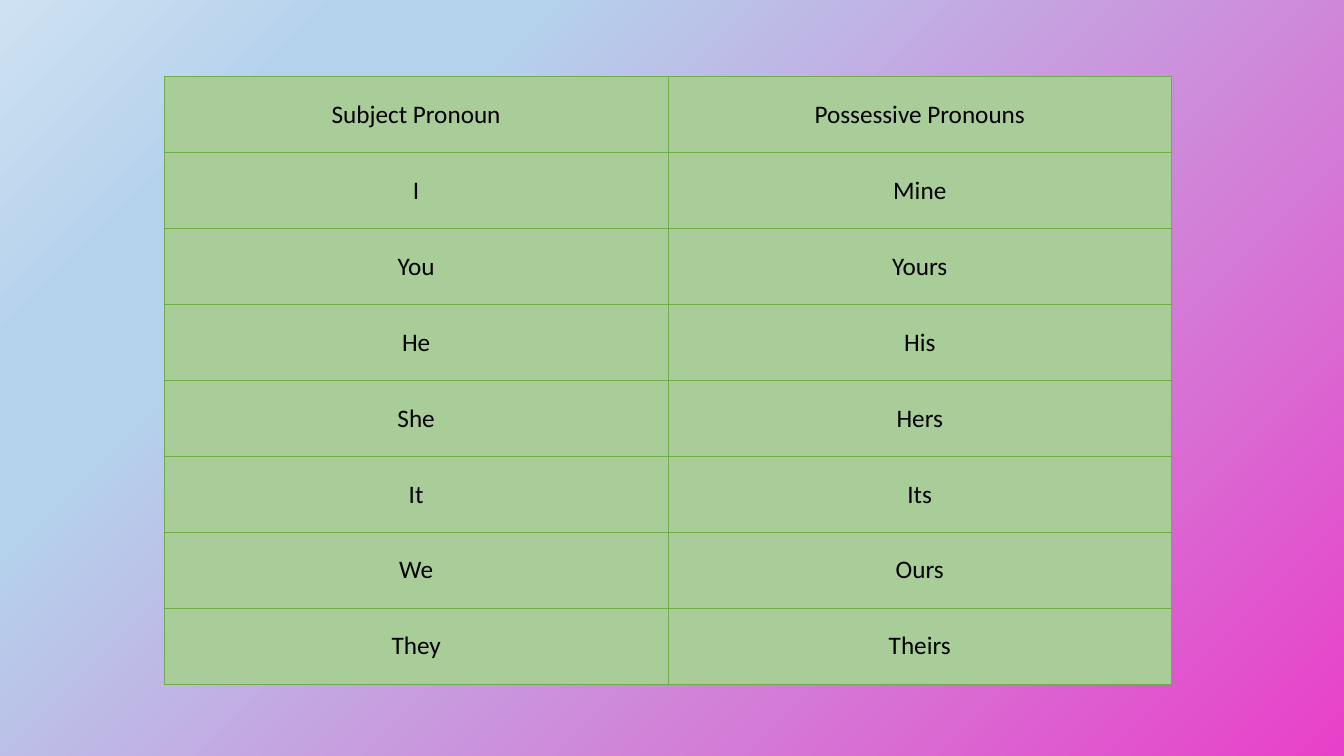
from lxml import etree
from pptx import Presentation, util as u
from pptx.dml.color import RGBColor
from pptx.enum import text
from pptx.oxml import parse_xml
from pptx.oxml.ns import nsdecls, qn

COLOURS = {"cell": "A9CD99", "border": "70AD47", "ink": "000000",
           "pink": "E840C8", "blue": "B5D2EC", "pale": "CEE1F2"}
STOPS = [(0, "pink"), (74, "blue"), (83, "blue"), (100, "pale")]
PRONOUNS = [
    ("Subject Pronoun", "Possessive Pronouns"),
    ("I", "Mine"),
    ("You", "Yours"),
    ("He", "His"),
    ("She", "Hers"),
    ("It", "Its"),
    ("We", "Ours"),
    ("They", "Theirs"),
]
WIDTH, HEIGHT = u.Inches(13.33), u.Inches(7.5)
LEFT, TOP = u.Inches(1.63), u.Inches(0.76)
COLUMN, ROW = u.Inches(4.995), u.Inches(6.03 / len(PRONOUNS))


def paint_background(page):
    """Radial gradient spreading from the bottom right corner."""
    page.background.fill.gradient()
    default = next(page.element.iter(qn("a:gradFill")))
    stops = "".join(
        f'<a:gs pos="{share * 1000}"><a:srgbClr val="{COLOURS[name]}"/></a:gs>'
        for share, name in STOPS)
    gradient = parse_xml(
        f'<a:gradFill {nsdecls("a")} rotWithShape="1"><a:gsLst>{stops}</a:gsLst>'
        '<a:path path="circle"><a:fillToRect l="100000" t="100000"/></a:path>'
        '<a:tileRect r="-100000" b="-100000"/></a:gradFill>')
    default.getparent().replace(default, gradient)


def draw_borders(cell):
    properties = cell._tc.get_or_add_tcPr()
    for index, side in enumerate(("lnL", "lnR", "lnT", "lnB")):
        line = etree.Element(qn(f"a:{side}"), w=str(u.Pt(0.5)))
        fill = etree.SubElement(line, qn("a:solidFill"))
        etree.SubElement(fill, qn("a:srgbClr"), val=COLOURS["border"])
        properties.insert(index, line)


def fill_cell(cell, wording):
    cell.fill.solid()
    cell.fill.fore_color.rgb = RGBColor.from_string(COLOURS["cell"])
    cell.vertical_anchor = text.MSO_ANCHOR.MIDDLE
    cell.text = wording
    para = cell.text_frame.paragraphs[0]
    para.alignment = text.PP_ALIGN.CENTER
    para.font.name = "Calibri"
    para.font.size = u.Pt(18)
    para.font.bold = False
    para.font.color.rgb = RGBColor.from_string(COLOURS["ink"])
    draw_borders(cell)


def add_pronoun_table(page):
    rows, columns = len(PRONOUNS), len(PRONOUNS[0])
    table = page.shapes.add_table(
        rows, columns, LEFT, TOP, columns * COLUMN, rows * ROW).table
    table.first_row = table.horz_banding = False
    for row, words in enumerate(PRONOUNS):
        for column, wording in enumerate(words):
            fill_cell(table.cell(row, column), wording)


def main():
    deck = Presentation()
    deck.slide_width, deck.slide_height = WIDTH, HEIGHT
    page = deck.slides.add_slide(deck.slide_layouts[6])  # blank layout
    paint_background(page)
    add_pronoun_table(page)
    deck.save("out.pptx")


if __name__ == "__main__":
    main()
